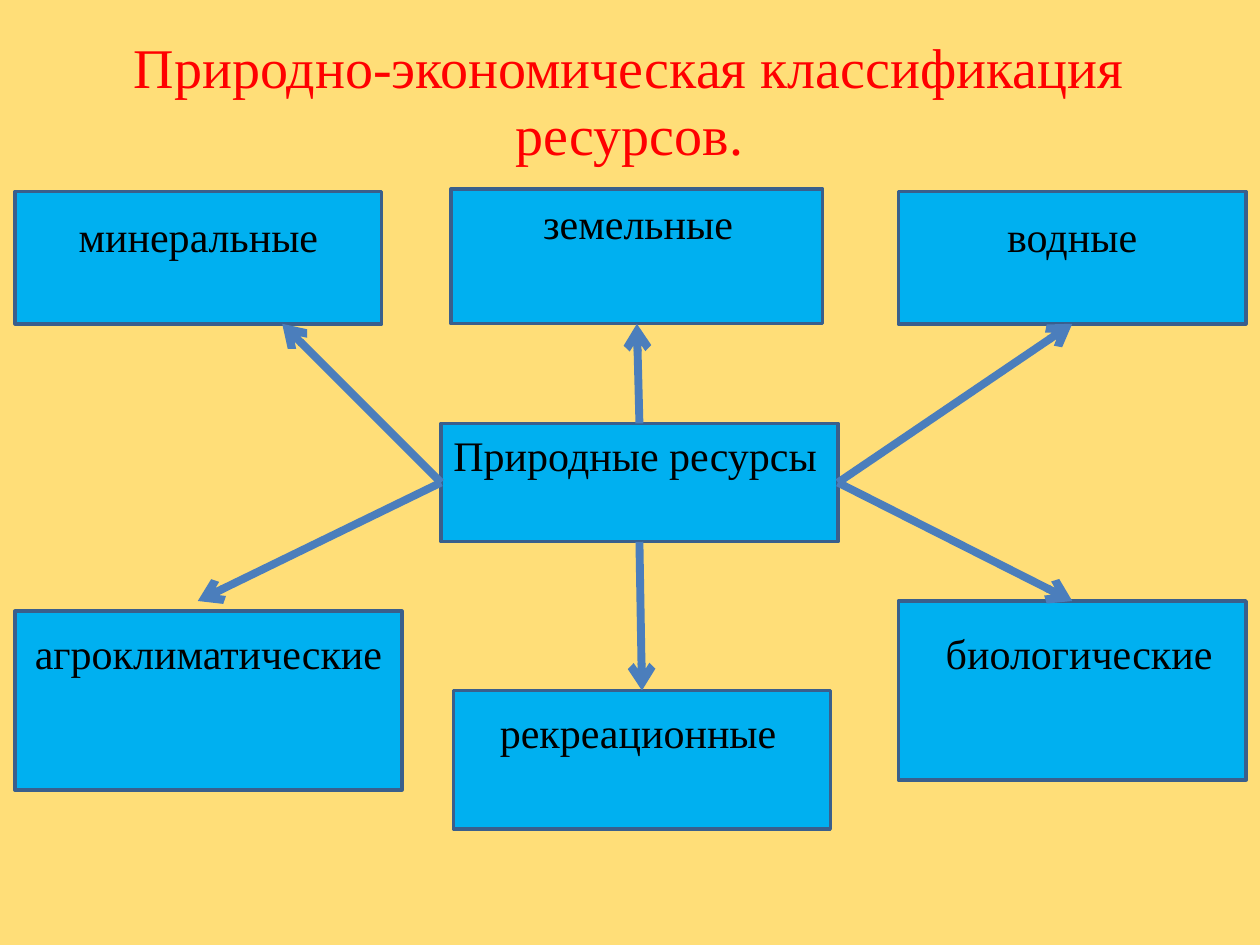
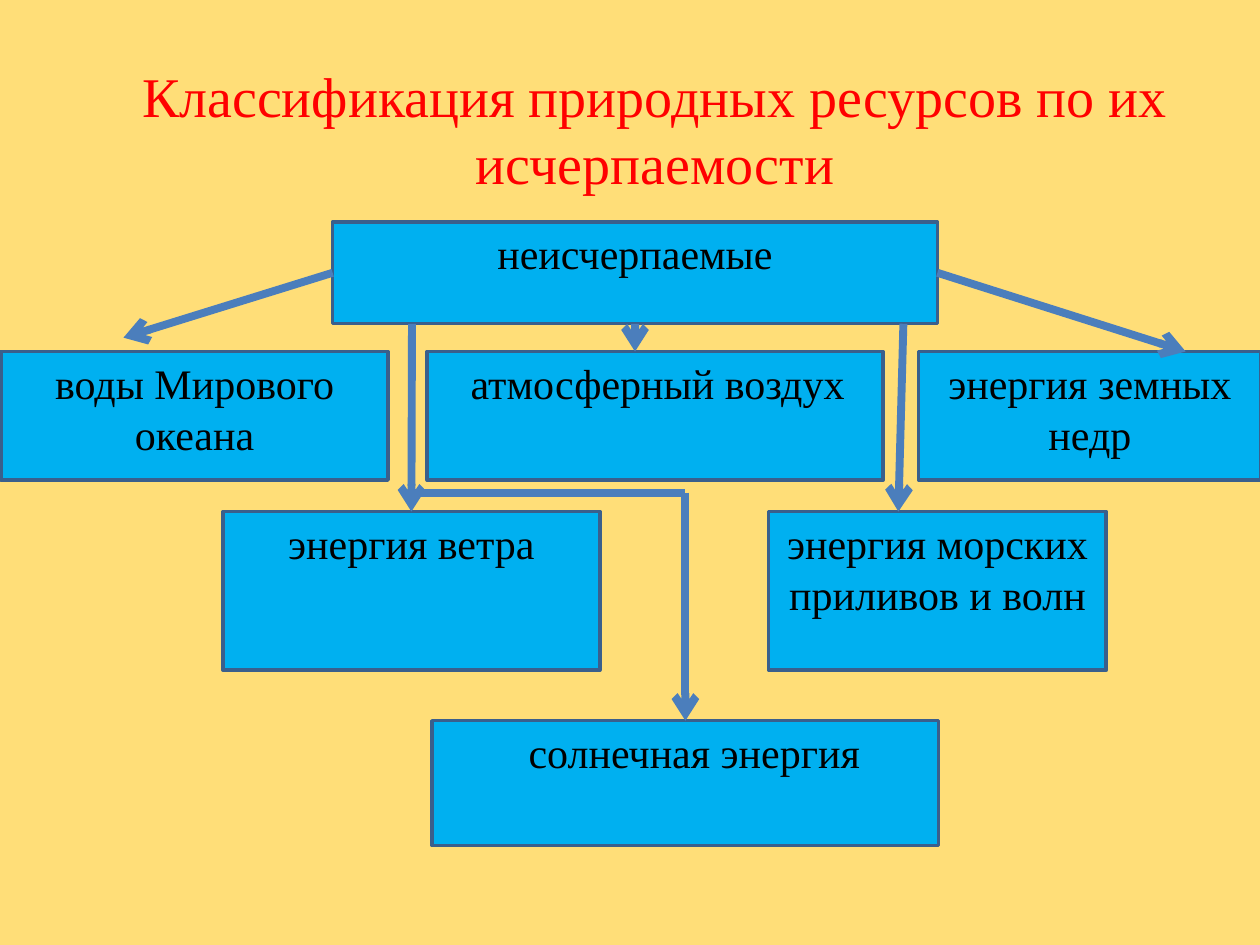
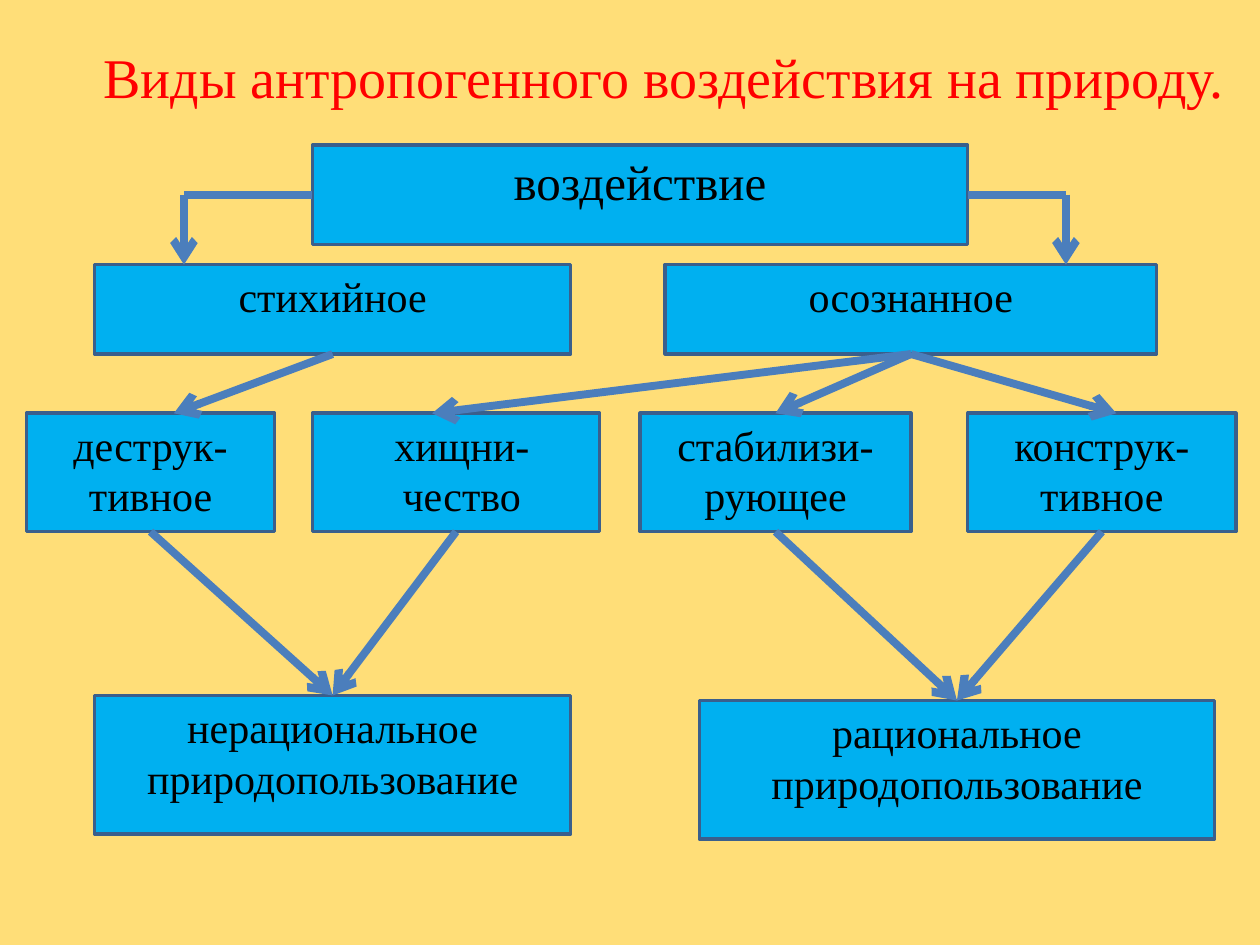
"""Three slides of box-and-arrow charts on the classes of natural resources."""
from lxml import etree
from pptx import Presentation
from pptx import util as u
from pptx.dml.color import RGBColor
from pptx.enum import shapes, text
from pptx.oxml.ns import qn

COLS, ROWS = 100, 75
WIDE, HIGH = u.Inches(10), u.Inches(7.5)
FONT = "Times New Roman"
SAND, RED, BLACK = "FFDE78", "FF0000", "000000"
SKY, EDGE, STEEL = "00B0F0", "3A5F8C", "4B7EBC"
TOP, LEFT, BASE, RIGHT = range(4)
ONE, TWO = 5, 9.1


def hue(code):
    """Turn a hex string into a colour."""
    return RGBColor.from_string(code)


def across(cols):
    """Turn grid columns into a length."""
    return round(WIDE * cols / COLS)


def down(rows):
    """Turn grid rows into a length."""
    return round(HIGH * rows / ROWS)


def area(x, y, w, h):
    """Turn a grid area into left, top, width and height."""
    return across(x), down(y), across(w), down(h)


def write(frame, words, size, tint, align=text.PP_ALIGN.CENTER):
    """Fill a text frame, one paragraph per line of words."""
    frame.word_wrap = True
    frame.vertical_anchor = text.MSO_ANCHOR.TOP
    for i, line in enumerate(words.split("\n")):
        para = frame.add_paragraph() if i else frame.paragraphs[0]
        para.alignment = align
        run = para.add_run()
        run.text = line
        run.font.name, run.font.size = FONT, u.Pt(size)
        run.font.color.rgb = hue(tint)


def page(deck, words, spot):
    """Add a slide with its red title."""
    slide = deck.slides.add_slide(deck.slide_layouts[5])
    title = slide.shapes.title
    title.left, title.top, title.width, title.height = area(*spot)
    title.text_frame.auto_size = text.MSO_AUTO_SIZE.NONE
    write(title.text_frame, words, 32, RED)
    return slide


def card(slide, words, spot, label=None, tall=ONE, size=24,
         align=text.PP_ALIGN.CENTER):
    """Add a blue box and its label, which may sit at its own x, y and width."""
    box = slide.shapes.add_shape(shapes.MSO_SHAPE.RECTANGLE, *area(*spot))
    box.shadow.inherit = False
    box.fill.solid()
    box.fill.fore_color.rgb = hue(SKY)
    box.line.color.rgb = hue(EDGE)
    box.line.width = u.Pt(2)
    note = slide.shapes.add_textbox(*area(*(label or spot[:3]), tall))
    note.text_frame.auto_size = text.MSO_AUTO_SIZE.SHAPE_TO_FIT_TEXT
    write(note.text_frame, words, size, BLACK, align)
    return box


def point(end):
    """Find the place of an end: a box with a side, or a grid point."""
    a, b = end
    if isinstance(a, (int, float)):
        return across(a), down(b)
    x = {LEFT: 0, RIGHT: a.width}.get(b, a.width // 2)
    y = {TOP: 0, BASE: a.height}.get(b, a.height // 2)
    return a.left + x, a.top + y


def link(slide, start, stop, head=True):
    """Draw a thick line between two ends and glue it to any boxes there."""
    line = slide.shapes.add_connector(
        shapes.MSO_CONNECTOR.STRAIGHT, *point(start), *point(stop))
    for end, glue in ((start, line.begin_connect), (stop, line.end_connect)):
        if not isinstance(end[0], (int, float)):
            glue(*end)
    line.line.color.rgb = hue(STEEL)
    line.line.width = u.Pt(4.5)
    if head:
        etree.SubElement(line.line._get_or_add_ln(), qn("a:tailEnd"), type="arrow")
    etree.SubElement(line._element.spPr, qn("a:effectLst"))


def bend(slide, start, turn, stop):
    """Draw an arrow with one corner."""
    link(slide, start, turn, head=False)
    link(slide, turn, stop)


def kinds(deck):
    """Build the slide on kinds of resources."""
    s = page(deck, "Природно-экономическая классификация ресурсов.",
             (3.5, 2.1, 92.9, 11.8))
    core = card(s, "Природные ресурсы", (35, 33.6, 31.5, 9.4),
                (35, 33.6, 30.9), align=text.PP_ALIGN.LEFT)
    card(s, "минеральные", (1.2, 15.2, 29.1, 10.5), (1.2, 16.2, 29.1))
    land = card(s, "земельные", (35.8, 15, 29.5, 10.7), (36, 15.2, 29.3))
    water = card(s, "водные", (71.3, 15.2, 27.6, 10.5), (71.3, 16.2, 27.6))
    card(s, "агроклиматические", (1.2, 48.5, 30.7, 14.2), (1.2, 49.3, 30.7))
    rest = card(s, "рекреационные", (36, 54.8, 29.9, 11), (36, 55.6, 29.3))
    life = card(s, "биологические", (71.3, 47.7, 27.6, 14.2), (71.3, 49.3, 28.7))
    for side, stop in ((TOP, (land, BASE)), (LEFT, (22.4, 25.7)),
                       (RIGHT, (water, BASE)), (LEFT, (15.7, 47.7)),
                       (RIGHT, (life, TOP)), (BASE, (rest, TOP))):
        link(s, (core, side), stop)


def supply(deck):
    """Build the slide on endless resources."""
    s = page(deck, "Классификация природных ресурсов по их исчерпаемости",
             (8.3, 4.4, 87.4, 11.8))
    root = card(s, "неисчерпаемые", (26.4, 17.6, 48, 8.1))
    card(s, "воды Мирового океана", (0.1, 27.9, 30.7, 10.2), tall=TWO)
    card(s, "атмосферный воздух", (33.9, 27.9, 36.2, 10.2), (34.3, 27.9, 35.8))
    card(s, "энергия земных недр", (72.9, 27.9, 27.2, 10.2), tall=TWO)
    wind = card(s, "энергия ветра", (17.7, 40.6, 29.9, 12.6))
    card(s, "энергия морских приливов и волн", (61, 40.6, 26.8, 12.6), tall=TWO)
    sun = card(s, "солнечная энергия", (34.3, 57.2, 40.2, 9.9),
               (35.8, 57.2, 38.6))
    for start, stop in (((root, BASE), (50.4, 27.9)),
                        ((root, LEFT), (9.8, 26.8)),
                        ((root, RIGHT), (94.1, 27.9)),
                        ((32.7, 25.7), (wind, TOP)),
                        ((71.7, 25.7), (71.3, 40.6))):
        link(s, start, stop)
    bend(s, (32.7, 39.1), (54.4, 39.1), (sun, TOP))


def impact(deck):
    """Build the slide on human impact."""
    s = page(deck, "Виды антропогенного воздействия на природу.",
             (3.5, 2.9, 98.4, 6.4))
    wild = card(s, "стихийное", (7.5, 21, 37.8, 7.1))
    aware = card(s, "осознанное", (52.8, 21, 39, 7.1))
    ruin, prey, hold, build = [
        card(s, words, (x, 32.8, w, 9.4), label, TWO)
        for words, x, w, label in (
            ("деструк-тивное", 2.1, 19.7, None),
            ("хищни-чество", 24.8, 22.8, (26.4, 32.8, 20.5)),
            ("стабилизи-рующее", 50.8, 21.5, None),
            ("конструк-\nтивное", 76.8, 21.3, None))]
    waste = card(s, "нерациональное природопользование",
                 (7.5, 55.2, 37.8, 11), tall=TWO)
    care = card(s, "рациональное природопользование",
                (55.5, 55.6, 40.9, 11), tall=TWO)
    root = card(s, "воздействие", (24.8, 11.5, 52, 7.9), tall=5.7, size=28)
    for side, x in ((LEFT, 14.6), (RIGHT, 84.6)):
        bend(s, (root, side), (x, 15.45), (x, 21))
    link(s, (wild, BASE), (13.8, 32.8))
    for stop in ((34.3, 32.8), (hold, TOP), (88.6, 32.8)):
        link(s, (aware, BASE), stop)
    for cause, fate in ((ruin, waste), (prey, waste), (hold, care), (build, care)):
        link(s, (cause, BASE), (fate, TOP))


def main():
    """Build and save the deck."""
    deck = Presentation()
    deck.slide_width, deck.slide_height = WIDE, HIGH
    back = deck.slide_master.background.fill
    back.solid()
    back.fore_color.rgb = hue(SAND)
    for make in (kinds, supply, impact):
        make(deck)
    deck.save("out.pptx")


if __name__ == "__main__":
    main()
